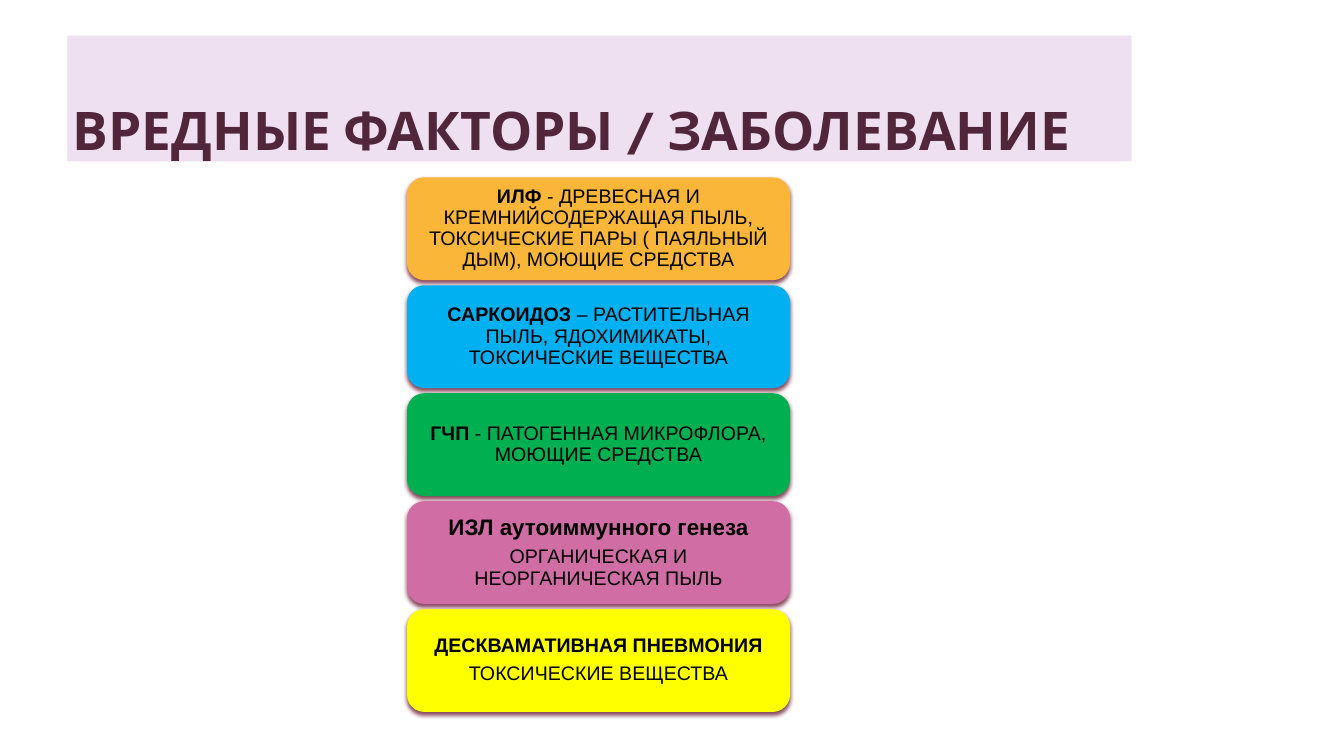
import pptx
import pptx.dml.color
import pptx.enum.shapes
import pptx.enum.text
import pptx.oxml
import pptx.oxml.ns
import pptx.util

Cm = pptx.util.Cm
Pt = pptx.util.Pt
SHAPES = pptx.enum.shapes.MSO_SHAPE
ANCHORS = pptx.enum.text.MSO_ANCHOR
ALIGN = pptx.enum.text.PP_ALIGN

# Fill, then paragraphs made of (text, size, bold) spans
DISEASES = [
    ("F9B639", [[("ИЛФ", 14, True),
                 (" - ДРЕВЕСНАЯ И КРЕМНИЙСОДЕРЖАЩАЯ ПЫЛЬ, ТОКСИЧЕСКИЕ ПАРЫ "
                  "( ПАЯЛЬНЫЙ ДЫМ), МОЮЩИЕ СРЕДСТВА", 14, False)]]),
    ("00B0F0", [[("САРКОИДОЗ", 14, True),
                 (" – РАСТИТЕЛЬНАЯ ПЫЛЬ, ЯДОХИМИКАТЫ, ТОКСИЧЕСКИЕ ВЕЩЕСТВА",
                  14, False)]]),
    ("00B050", [[("ГЧП", 14, True),
                 (" - ПАТОГЕННАЯ МИКРОФЛОРА, МОЮЩИЕ СРЕДСТВА", 14, False)]]),
    ("CF6DA4", [[("ИЗЛ аутоиммунного генеза", 16, True)],
                [("ОРГАНИЧЕСКАЯ И НЕОРГАНИЧЕСКАЯ ПЫЛЬ", 14, False)]]),
    ("FFFF00", [[("ДЕСКВАМАТИВНАЯ ПНЕВМОНИЯ", 14, True)],
                [("ТОКСИЧЕСКИЕ ВЕЩЕСТВА", 14, False)]]),
]


def paint(color_format, hex_color):
    color_format.rgb = pptx.dml.color.RGBColor.from_string(hex_color)


def add_block(page, preset, box, fill, anchor, side_inset, end_inset):
    """Add a borderless filled shape; box is left, top, width, height in cm."""
    block = page.shapes.add_shape(preset, *[Cm(length) for length in box])
    block.shadow.inherit = False
    block.fill.solid()
    paint(block.fill.fore_color, fill)
    block.line.fill.background()
    frame = block.text_frame
    frame.word_wrap = True
    frame.vertical_anchor = anchor
    frame.margin_left = frame.margin_right = Cm(side_inset)
    frame.margin_top = frame.margin_bottom = Cm(end_inset)
    return block


def style_span(span, font_name, size, bold, color):
    span.font.name = font_name
    span.font.size = Pt(size)
    span.font.bold = bold
    paint(span.font.color, color)


def add_soft_shadow(block):
    effects = block.element.spPr.find(pptx.oxml.ns.qn("a:effectLst"))
    effects.append(pptx.oxml.parse_xml(
        f'<a:outerShdw {pptx.oxml.ns.nsdecls("a")} blurRad="{Pt(3.1)}" '
        f'dist="{Pt(2)}" dir="5400000" algn="ctr" rotWithShape="0">'
        '<a:srgbClr val="722640"><a:alpha val="83000"/></a:srgbClr>'
        '</a:outerShdw>'))


def add_title(page, box):
    banner = add_block(page, SHAPES.RECTANGLE, box, "EEE0F1",
                       ANCHORS.BOTTOM, 0.13, 0)
    para = banner.text_frame.paragraphs[0]
    para.text = "ВРЕДНЫЕ ФАКТОРЫ / ЗАБОЛЕВАНИЕ"
    para.alignment = ALIGN.LEFT
    style_span(para.runs[0], "Cabin", 38, True, "51253A")


def add_disease(page, box, fill, paragraphs):
    card = add_block(page, SHAPES.ROUNDED_RECTANGLE, box, fill,
                     ANCHORS.MIDDLE, 0.15, 0.08)
    add_soft_shadow(card)
    frame = card.text_frame
    for number, spans in enumerate(paragraphs):
        para = frame.add_paragraph() if number else frame.paragraphs[0]
        para.alignment = ALIGN.CENTER
        para.line_spacing = 0.9
        para.space_after = Pt(5)
        for text, size, bold in spans:
            span = para.add_run()
            span.text = text
            style_span(span, "Arial", size, bold, "000000")


def add_disease_stack(page, box, gap):
    left, top, width, height = box
    card_height = (height - gap * (len(DISEASES) - 1)) / len(DISEASES)
    for number, (fill, paragraphs) in enumerate(DISEASES):
        card_top = top + number * (card_height + gap)
        add_disease(page, (left, card_top, width, card_height), fill, paragraphs)


def main():
    deck = pptx.Presentation()
    deck.slide_width, deck.slide_height = Cm(33.87), Cm(19.05)
    page = deck.slides.add_slide(deck.slide_layouts[6])
    add_title(page, (1.7, 0.9, 26.82, 3.17))
    add_disease_stack(page, (10.26, 4.47, 9.65, 13.47), 0.13)
    deck.save("out.pptx")


if __name__ == "__main__":
    main()
